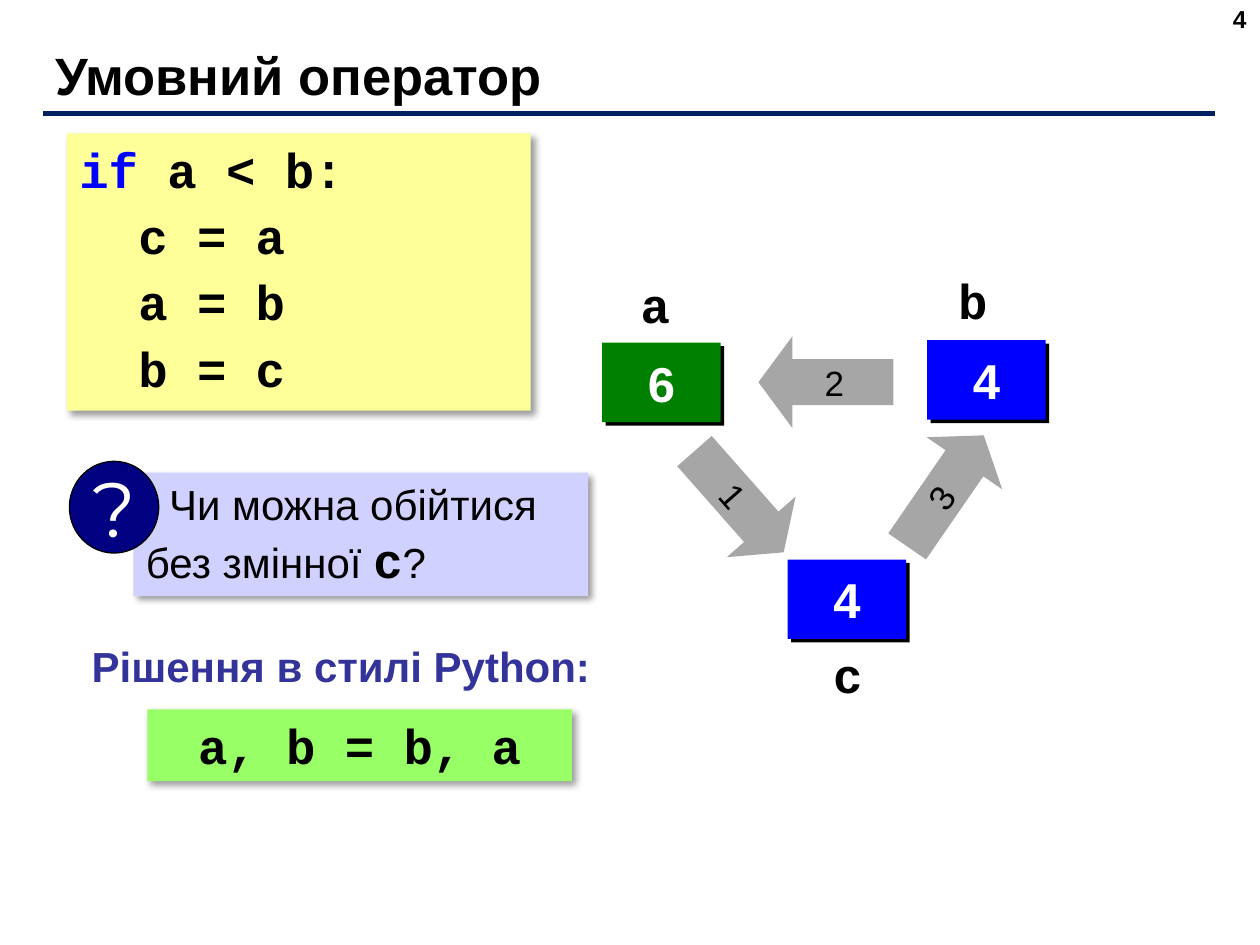
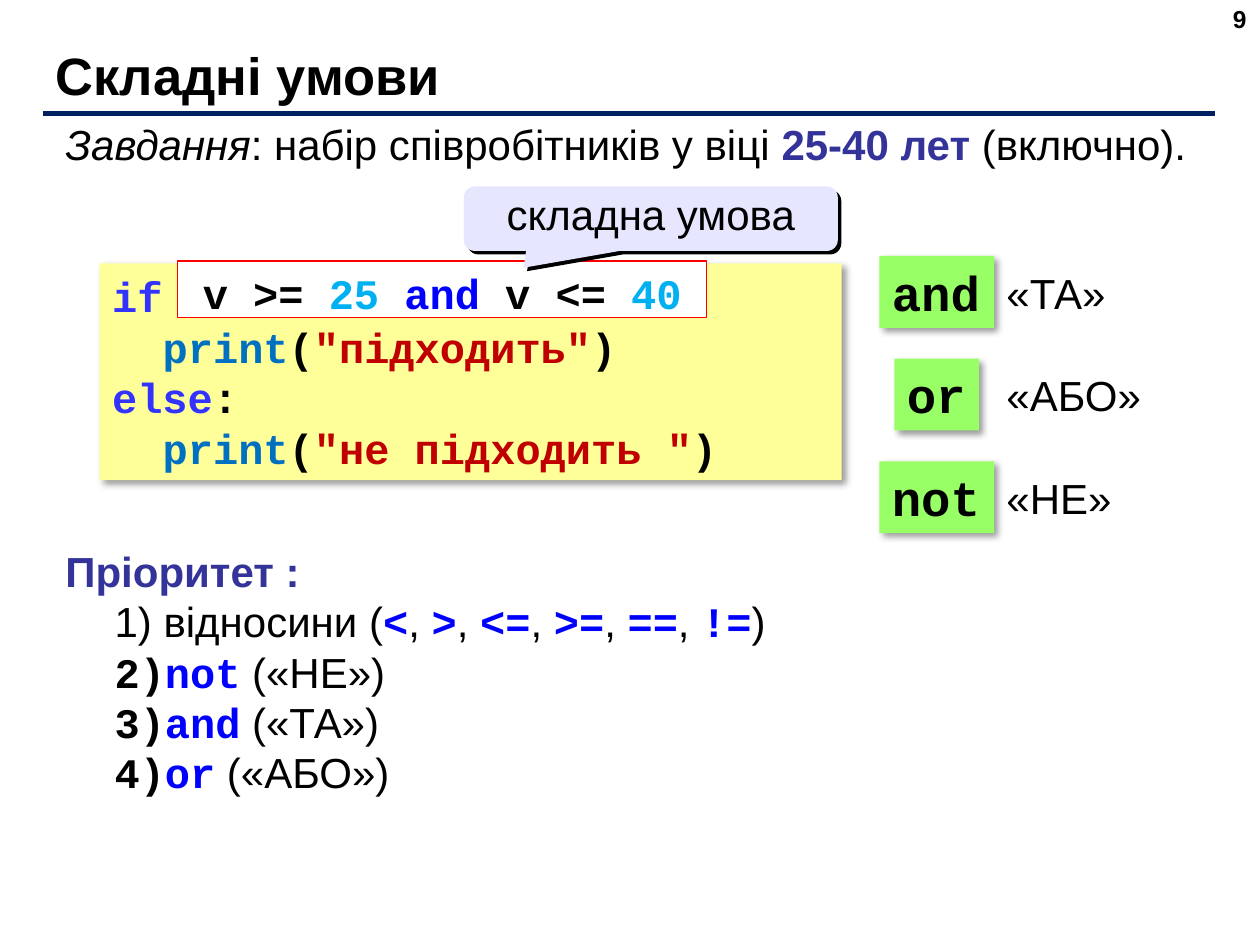
from lxml import etree
from pptx import Presentation
from pptx.dml.color import RGBColor
from pptx.enum.shapes import MSO_CONNECTOR, MSO_SHAPE
from pptx.enum.text import MSO_ANCHOR, MSO_AUTO_SIZE, PP_ALIGN
from pptx.oxml.ns import qn
from pptx.util import Cm, Pt

RECT, OVAL = MSO_SHAPE.RECTANGLE, MSO_SHAPE.OVAL
RIGHT_ARROW, LEFT_ARROW = MSO_SHAPE.RIGHT_ARROW, MSO_SHAPE.LEFT_ARROW
CALLOUT = MSO_SHAPE.ROUNDED_RECTANGULAR_CALLOUT
STRAIGHT = MSO_CONNECTOR.STRAIGHT
TOP, MIDDLE = MSO_ANCHOR.TOP, MSO_ANCHOR.MIDDLE
LEFT, CENTER, RIGHT = PP_ALIGN.LEFT, PP_ALIGN.CENTER, PP_ALIGN.RIGHT
NO_FIT = MSO_AUTO_SIZE.NONE

COLORS = {
    "black": "000000", "white": "FFFFFF", "rule": "002060", "code": "FFFF99",
    "chip": "99FF66", "panel": "D1D1FF", "badge": "000080", "bubble": "E6E6FF",
    "arrow": "A6A6A6", "blue": "0000FF", "green": "008000", "accent": "333399",
    "keyword": "3333FF", "function": "0070C0", "string": "C00000",
    "number": "00B0F0", "red": "FF0000",
}
ARIAL, MONO = "Arial", "Courier New"
SOFT = {"alpha": 40, "blur": 4, "dist": 3}
HARD = {"alpha": 100, "blur": 0, "dist": 2.8}


def style(name, size, color="black", **extra):
    """Return the format values of a run."""
    return {"name": name, "size": Pt(size), "color": color, **extra}


TITLE = style(ARIAL, 30, bold=True)
NUMBER = style(ARIAL, 14, bold=True)
BODY = style(ARIAL, 24)
ACCENT = style(ARIAL, 24, "accent", bold=True)
CODE = style(MONO, 24, bold=True)
BIG_CODE = style(MONO, 28, bold=True)
VALUE = style(ARIAL, 28, "white", bold=True)
STEP = style(ARIAL, 20)
BADGE = style("Montserrat", 44, "white")


def rgb(key):
    """Return a named colour."""
    return RGBColor.from_string(COLORS[key])


def tint(base, color):
    """Return a run style in another colour."""
    return {**base, "color": color}


def write(tf, lines, align=LEFT, anchor=TOP, wrap=True, before=None, spacing=None):
    """Fill a text frame with lines of (text, style) runs and return its paragraphs."""
    frame = {"word_wrap": wrap, "auto_size": NO_FIT, "vertical_anchor": anchor}
    for key, value in frame.items():
        setattr(tf, key, value)
    for i, line in enumerate(lines):
        p = tf.add_paragraph() if i else tf.paragraphs[0]
        form = {"alignment": align, "space_before": before, "line_spacing": spacing}
        for key, value in form.items():
            setattr(p, key, value)
        for text, values in line:
            r = p.add_run()
            r.text = text
            for key, value in values.items():
                if key == "color":
                    r.font.color.rgb = rgb(value)
                else:
                    setattr(r.font, key, value)
    return tf.paragraphs


def indent(p, left, first=0):
    """Set the left margin and first-line indent of a paragraph in cm."""
    ppr = p._p.get_or_add_pPr()
    ppr.set("marL", str(Cm(left)))
    ppr.set("indent", str(Cm(first)))
    return ppr


def add_shadow(sp, alpha, blur, dist):
    """Give a shape a black shadow falling to the lower right."""
    effects = sp._element.spPr.find(qn("a:effectLst"))
    outer = etree.SubElement(effects, qn("a:outerShdw"), blurRad=str(Pt(blur)),
                             dist=str(Pt(dist)), dir="2700000", algn="tl", rotWithShape="0")
    color = etree.SubElement(outer, qn("a:srgbClr"), val=COLORS["black"])
    etree.SubElement(color, qn("a:alpha"), val=str(alpha * 1000))


def add_box(shapes, kind, box, fill, lines, line=None, shadow=None, adj=(), **form):
    """Add a filled shape with text."""
    sp = shapes.add_shape(kind, *map(Cm, box))
    sp.shadow.inherit = False
    sp.fill.solid()
    sp.fill.fore_color.rgb = rgb(fill)
    if line:
        sp.line.color.rgb = rgb(line)
        sp.line.width = Pt(0.75)
    else:
        sp.line.fill.background()
    if shadow:
        add_shadow(sp, **shadow)
    for i, value in enumerate(adj):
        sp.adjustments[i] = value
    write(sp.text_frame, lines, **form)
    return sp


def add_text(shapes, box, lines, **form):
    """Add a text box and return its paragraphs."""
    return write(shapes.add_textbox(*map(Cm, box)).text_frame, lines, **form)


def new_slide(prs, title, number):
    """Add a slide with its title, page number and rule."""
    s = prs.slides.add_slide(prs.slide_layouts[5])
    sp = s.shapes.title
    for key, value in zip(("left", "top", "width", "height"), (0.86, 0.84, 23.27, 1.32)):
        setattr(sp, key, Cm(value))
    write(sp.text_frame, [[(title, TITLE)]], anchor=MIDDLE)
    add_text(s.shapes, (19.46, -0.05, 5.92, 1.32), [[(number, NUMBER)]], align=RIGHT)
    rule = s.shapes.add_connector(STRAIGHT, *map(Cm, (0.86, 2.29, 24.49, 2.29)))
    rule.line.color.rgb = rgb("rule")
    rule.line.width = Pt(3)
    etree.SubElement(rule._element.spPr, qn("a:effectLst"))
    return s


def swap_code(s, box):
    """Show the code that swaps two variables."""
    lines = [[("if", tint(BIG_CODE, "blue")), (" a < b:", BIG_CODE)]]
    lines += [[(text, BIG_CODE)] for text in ("с = a", "a = b", "b = c")]
    sp = add_box(s.shapes, RECT, box, "code", lines, shadow=SOFT, before=Pt(4.2))
    for p in sp.text_frame.paragraphs[1:]:
        indent(p, 1.19)


def swap_diagram(s, x, y):
    """Show the three variables and the order of assignments."""
    cells = [("c", "4", "blue", 3.74, 5.95, 0.55, 1.6),
             ("a", "6", "green", 0, 1.58, 0.41, -1.5),
             ("b", "4", "blue", 6.55, 1.53, 0.26, -1.53)]
    center = {"align": CENTER, "anchor": MIDDLE, "wrap": False}
    for name, value, fill, dx, dy, name_dx, name_dy in cells:
        left, top = x + dx, y + dy
        add_box(s.shapes, RECT, (left, top, 2.39, 1.6), fill, [[(value, VALUE)]],
                shadow=HARD, **center)
        add_text(s.shapes, (left + name_dx, top + name_dy, 1.32, 1.42),
                 [[(name, BIG_CODE)]], **center)
    arrows = [("1", RIGHT_ARROW, 1.4, 3.86, 48.6), ("2", LEFT_ARROW, 3.15, 1.45, 0),
              ("3", RIGHT_ARROW, 5.56, 3.64, 304.6)]
    for step, kind, dx, dy, angle in arrows:
        sp = add_box(s.shapes, kind, (x + dx, y + dy, 2.72, 1.85), "arrow",
                     [[(step, STEP)]], adj=(0.5, 0.37), **center)
        sp.rotation = angle


def question(s, x, y):
    """Show a question panel with its round badge."""
    shapes = s.shapes.add_group_shape().shapes
    runs = [("Чи можна обійтися без змінної ", BODY), ("c", BIG_CODE), ("?", BODY)]
    sp = add_box(shapes, RECT, (x + 1.29, y + 0.23, 9.17, 2.49), "panel", [runs], shadow=SOFT)
    indent(sp.text_frame.paragraphs[0], 0, 0.47)
    add_box(shapes, OVAL, (x, y, 1.8, 1.85), "badge", [[("?", BADGE)]], line="black",
            align=CENTER, anchor=MIDDLE, wrap=False)


def python_style(s, x, y):
    """Show the one-line solution under its heading."""
    add_text(s.shapes, (x, y, 10.64, 1.27), [[("Рішення в стилі Python:", ACCENT)]], wrap=False)
    add_box(s.shapes, RECT, (x + 1.37, y + 1.52, 8.56, 1.45), "chip",
            [[("a, b = b, a", BIG_CODE)]], shadow=SOFT, align=CENTER)


def task(s, box):
    """State the task."""
    add_text(s.shapes, box, [[("Завдання", {**BODY, "italic": True}),
                              (": набір співробітників у віці ", BODY),
                              ("25-40 лет ", ACCENT), ("(включно).", BODY)]])


def condition_code(s, x, y):
    """Show the branching code, its framed condition and the callout."""
    def call(text):
        return [("print", tint(CODE, "function")), ("(", CODE),
                (text, tint(CODE, "string")), (")", CODE)]

    keyword, number = tint(CODE, "keyword"), tint(CODE, "number")
    lines = [[("if", keyword), ("\t:", CODE)], call('"підходить"'),
             [("else", keyword), (":", CODE)], call('"не підходить "')]
    sp = add_box(s.shapes, RECT, (x, y, 14.96, 4.37), "code", lines, shadow=SOFT, anchor=MIDDLE)
    paragraphs = sp.text_frame.paragraphs
    tabs = etree.SubElement(indent(paragraphs[0], 0), qn("a:tabLst"))
    etree.SubElement(tabs, qn("a:tab"), pos=str(Cm(12.19)), algn="l")
    for p in paragraphs[1::2]:
        indent(p, 1.02)
    condition = [("v >= ", CODE), ("25 ", number), ("and", tint(CODE, "blue")),
                 (" v <= ", CODE), ("40", number)]
    sp = add_box(s.shapes, RECT, (x + 1.57, y - 0.05, 10.67, 1.14), "white", [condition],
                 line="red", align=CENTER)
    sp.text_frame.margin_bottom = 0
    add_box(s.shapes, CALLOUT, (x + 7.34, y - 1.55, 7.54, 1.3), "bubble",
            [[("складна умова", BODY)]], shadow=HARD, adj=(-0.34, 0.76, 0.17),
            align=CENTER, anchor=MIDDLE, spacing=0.8)


def operators(s, x, y):
    """List the logical operators with their translations."""
    for i, (name, meaning) in enumerate((("and", "«ТА»"), ("or", "«АБО»"), ("not", "«НЕ»"))):
        top, width = y + 2.07 * i, 0.51 + 0.6 * len(name)
        add_box(s.shapes, RECT, (x + (2.31 - width) / 2, top, width, 1.45), "chip",
                [[(name, BIG_CODE)]], shadow=SOFT, wrap=False)
        add_text(s.shapes, (x + 2.31, top + 0.1, 3.25, 1.27), [[(meaning, BODY)]])


def priority(s, box):
    """List the order in which operators apply."""
    sign = tint(CODE, "blue")
    relations = [("відносини (", BODY)]
    for i, text in enumerate(("<", ">", "<=", ">=", "==", "!=")):
        relations += [(", ", BODY)] * bool(i) + [(text, sign)]
    lines = [[("Пріоритет :", ACCENT)], relations + [(")", BODY)]]
    lines += [[(name, sign), (f" («{meaning}»)", BODY)]
              for name, meaning in (("not", "НЕ"), ("and", "ТА"), ("or", "АБО"))]
    for p in add_text(s.shapes, box, lines)[1:]:
        ppr = indent(p, 1.98, -0.99)
        color = etree.SubElement(ppr, qn("a:buClr"))
        etree.SubElement(color, qn("a:srgbClr"), val=COLORS["black"])
        etree.SubElement(ppr, qn("a:buAutoNum"), type="arabicParenR")


def main():
    """Build both slides."""
    prs = Presentation()
    prs.slide_width, prs.slide_height = Cm(25.4), Cm(19.05)
    s = new_slide(prs, "Умовний оператор", "4")
    swap_code(s, (1.35, 2.69, 9.35, 5.59))
    swap_diagram(s, 12.14, 5.33)
    question(s, 1.4, 9.3)
    python_style(s, 1.6, 12.78)
    s = new_slide(prs, "Складні умови", "9")
    task(s, (1.07, 2.26, 23.39, 1.27))
    condition_code(s, 2.01, 5.31)
    operators(s, 17.73, 5.16)
    priority(s, (1.07, 10.87, 16.76, 5.38))
    prs.save("out.pptx")


if __name__ == "__main__":
    main()
